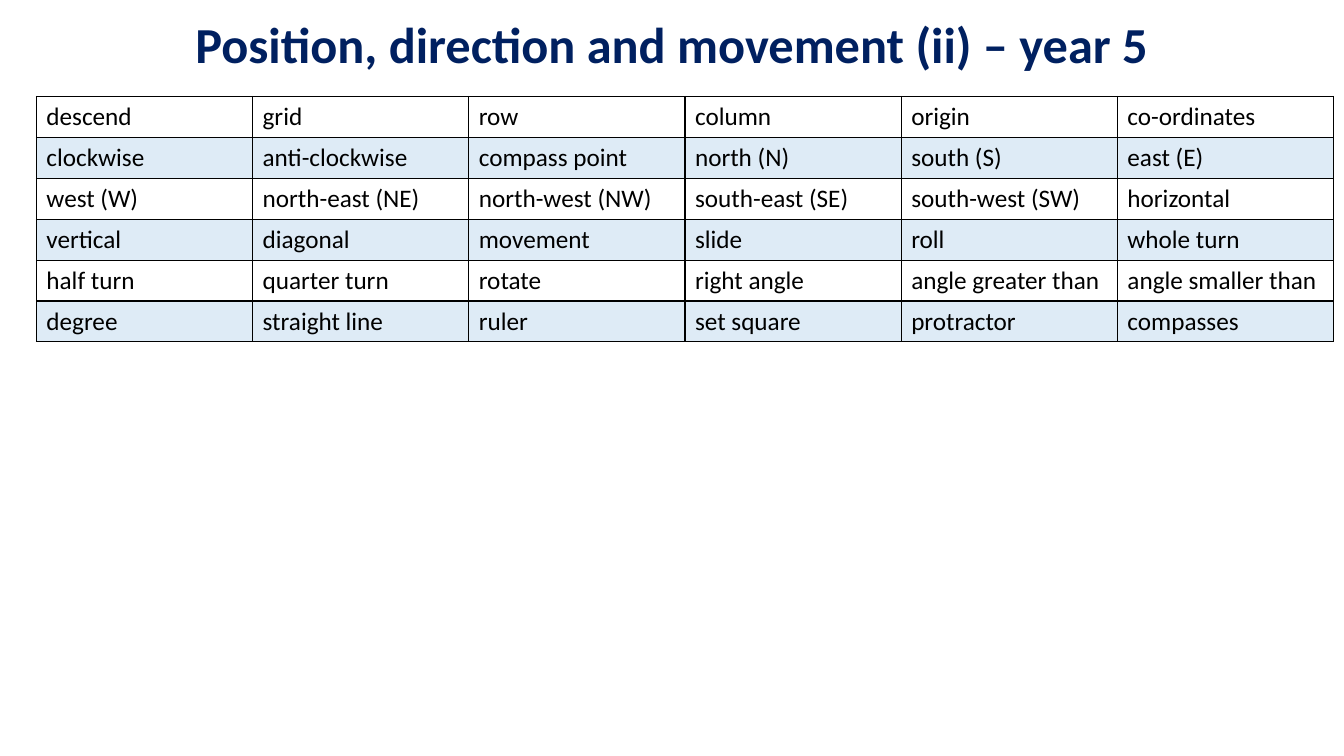
from lxml.etree import SubElement
from pptx import Presentation
from pptx.dml.color import RGBColor
from pptx.enum.text import MSO_ANCHOR, PP_ALIGN
from pptx.oxml import parse_xml
from pptx.oxml.ns import nsdecls, qn
from pptx.util import Pt

FONT = "Calibri"
BLACK = "000000"
VOCABULARY = [
    ["descend", "grid", "row", "column", "origin", "co-ordinates"],
    ["clockwise", "anti-clockwise", "compass point", "north (N)", "south (S)", "east (E)"],
    ["west (W)", "north-east (NE)", "north-west (NW)", "south-east (SE)", "south-west (SW)", "horizontal"],
    ["vertical", "diagonal", "movement", "slide", "roll", "whole turn"],
    ["half turn", "quarter turn", "rotate", "right angle", "angle greater than", "angle smaller than"],
    ["degree", "straight line", "ruler", "set square", "protractor", "compasses"],
]


def color(value):
    return RGBColor.from_string(value)


def style_text(para, size, value, bold=False):
    for span in para.runs:
        span.font.name = FONT
        span.font.size = Pt(size)
        span.font.bold = bold
        span.font.color.rgb = color(value)


def add_title(page, text):
    title = page.shapes.title
    title.left, title.top, title.width, title.height = Pt(66), Pt(4.5), Pt(828), Pt(58)
    frame = title.text_frame
    frame.text = text
    frame.word_wrap = True
    frame.vertical_anchor = MSO_ANCHOR.MIDDLE
    para = frame.paragraphs[0]
    para.alignment = PP_ALIGN.CENTER
    para.line_spacing = 0.9
    style_text(para, 36, "002060", bold=True)


def shade_cell(cell, shaded):
    if not shaded:
        cell.fill.background()
        return
    cell.fill.solid()
    cell.fill.fore_color.rgb = color("5B9BD5")
    tint = next(cell._tc.tcPr.iter(qn("a:srgbClr")))
    SubElement(tint, qn("a:alpha"), val="20000")


def border_cell(cell):
    properties = cell._tc.get_or_add_tcPr()
    for position, side in enumerate(("lnL", "lnR", "lnT", "lnB")):
        line = parse_xml(
            f'<a:{side} {nsdecls("a")} w="{Pt(1)}"><a:solidFill>'
            f'<a:srgbClr val="{BLACK}"/></a:solidFill></a:{side}>'
        )
        properties.insert(position, line)


def add_word_table(page, rows):
    column_width, row_height = Pt(154.44), Pt(29.2)
    columns = len(rows[0])
    frame = page.shapes.add_table(
        len(rows), columns, Pt(26), Pt(69),
        column_width * columns, row_height * len(rows),
    )
    table = frame.table
    table.first_row = False
    table.horz_banding = False
    for column in table.columns:
        column.width = column_width
    for row_number, words in enumerate(rows):
        table.rows[row_number].height = row_height
        for column_number, word in enumerate(words):
            cell = table.cell(row_number, column_number)
            cell.text_frame.text = word
            style_text(cell.text_frame.paragraphs[0], 18, BLACK)
            shade_cell(cell, row_number % 2 == 1)
            border_cell(cell)


def main():
    deck = Presentation()
    deck.slide_width, deck.slide_height = Pt(960), Pt(540)
    page = deck.slides.add_slide(deck.slide_layouts[5])
    add_title(page, "Position, direction and movement (ii) – year 5")
    add_word_table(page, VOCABULARY)
    deck.save("out.pptx")


if __name__ == "__main__":
    main()
